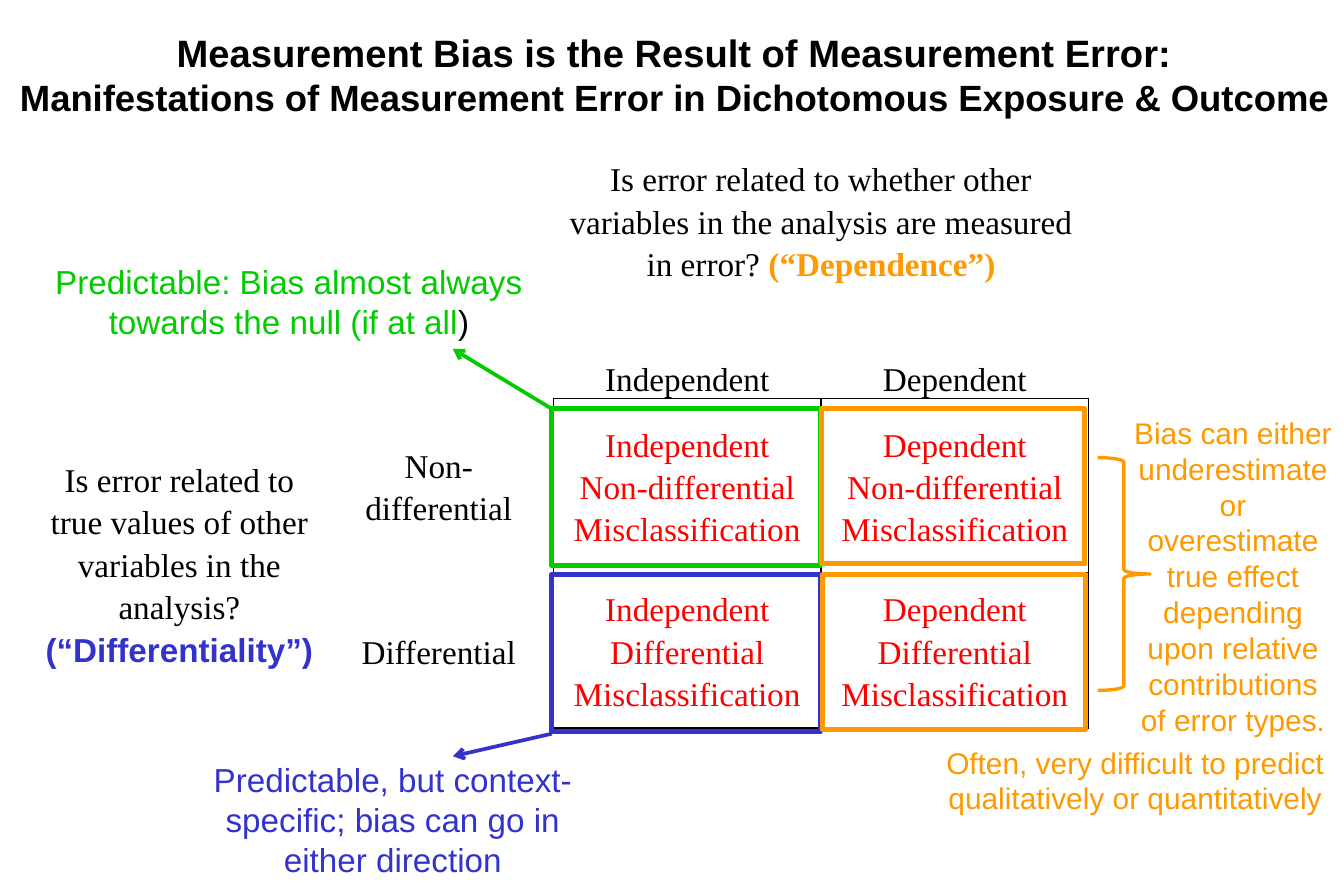
from lxml import etree
from pptx import Presentation
from pptx.dml.color import RGBColor
from pptx.enum.shapes import MSO_CONNECTOR, MSO_SHAPE
from pptx.enum.text import MSO_ANCHOR, PP_ALIGN
from pptx.oxml.ns import qn
from pptx.util import Cm, Pt

CENTER = PP_ALIGN.CENTER
TOP, MIDDLE = MSO_ANCHOR.TOP, MSO_ANCHOR.MIDDLE
STRAIGHT = MSO_CONNECTOR.STRAIGHT
RECTANGLE, RIGHT_BRACE = MSO_SHAPE.RECTANGLE, MSO_SHAPE.RIGHT_BRACE

BLACK = RGBColor(0x00, 0x00, 0x00)
RED = RGBColor(0xFF, 0x00, 0x00)
GREEN = RGBColor(0x00, 0xCC, 0x00)
BLUE = RGBColor(0x33, 0x33, 0xCC)
ORANGE = RGBColor(0xFF, 0x99, 0x00)
SANS, SERIF = "Arial", "Times New Roman"

# Content: a run is (text, font, size, colour, bold)
TITLE_RUNS = [
    ("Measurement Bias is the Result of Measurement Error:", SANS, 23, BLACK, True),
    ("Manifestations of Measurement Error in Dichotomous Exposure & Outcome",
     SANS, 22, BLACK, True),
]


def serif(text, color=BLACK):
    return [(text, SERIF, 20, color, False)]


DEPENDENCE_QUESTION = [
    serif("Is error related to whether other variables in the analysis "
          "are measured in error? ")
    + [("(“Dependence”)", SERIF, 20, ORANGE, True)]
]
DIFFERENTIALITY_QUESTION = [
    serif("Is error related to true values of other variables in the analysis?"),
    [("(“Differentiality”)", SANS, 20, BLUE, True)],
]
DEPENDENCE = ["Independent", "Dependent"]
DIFFERENTIALITY = ["Non-differential", "Differential"]

# Notes: left, top, width, height in cm, then runs
NOTES = [
    (0.53, 5.44, 11.23, 1.96, [
        ("Predictable: Bias almost always towards the null (if at all",
         SANS, 20, GREEN, False),
        (")", SANS, 20, BLACK, False)]),
    (3.91, 16.03, 8.89, 2.82, [
        ("Predictable, but context-specific; bias can go in either direction",
         SANS, 20, BLUE, False)]),
    (23.83, 8.69, 4.78, 7.19, [
        ("Bias can either underestimate or overestimate true effect depending "
         "upon relative contributions of error types.", SANS, 18, ORANGE, False)]),
    (19.53, 15.7, 9.22, 1.8, [
        ("Often, very difficult to predict qualitatively or quantitatively",
         SANS, 18, ORANGE, False)]),
]

# Outlines: preset, left, top, width, height in cm, colour, line width
OUTLINES = [
    (RECTANGLE, 11.73, 8.69, 5.72, 3.33, GREEN, 3),
    (RECTANGLE, 11.73, 12.22, 5.72, 3.33, BLUE, 3),
    (RECTANGLE, 17.48, 8.69, 5.59, 3.3, ORANGE, 3),
    (RECTANGLE, 17.5, 12.22, 5.59, 3.3, ORANGE, 3),
    (RIGHT_BRACE, 23.34, 9.73, 1.12, 4.95, ORANGE, 2),
]

# Arrows: start and end in cm, colour
ARROWS = [
    (11.73, 8.69, 9.63, 7.42, GREEN),
    (11.73, 15.6, 9.63, 16.08, BLUE),
]

COLUMN_WIDTHS = [6.15, 4.88, 5.69, 5.69, 1.73]
ROW_HEIGHTS = [4.24, 0.84, 3.7, 3.31, 0.84]
FIRST_ROW, FIRST_COL = 2, 2  # where the two-by-two matrix starts
MATRIX = {(FIRST_ROW + r, FIRST_COL + c) for r in range(2) for c in range(2)}
SIDES = {"L": (0, -1), "R": (0, 1), "T": (-1, 0), "B": (1, 0)}


def add_run(paragraph, text, font, size, color, bold):
    run = paragraph.add_run()
    run.text = text
    run.font.name = font
    run.font.size = Pt(size)
    run.font.bold = bold
    run.font.color.rgb = color


def fill_cell(cell, paragraphs, anchor=MIDDLE):
    cell.vertical_anchor = anchor
    frame = cell.text_frame
    for i, runs in enumerate(paragraphs):
        paragraph = frame.add_paragraph() if i else frame.paragraphs[0]
        paragraph.alignment = CENTER
        paragraph.line_spacing = 1.15
        for run in runs:
            add_run(paragraph, *run)


def draw_borders(cell, row, col):
    """A side is black where it touches a matrix cell, otherwise empty."""
    properties = cell._tc.get_or_add_tcPr()
    for side, (down, across) in SIDES.items():
        line = etree.SubElement(properties, qn("a:ln" + side), w=str(Pt(1)))
        if (row, col) in MATRIX or (row + down, col + across) in MATRIX:
            fill = etree.SubElement(line, qn("a:solidFill"))
            etree.SubElement(fill, qn("a:srgbClr"), val=str(BLACK))
        else:
            etree.SubElement(line, qn("a:noFill"))


prs = Presentation()
prs.slide_width, prs.slide_height = Cm(28.58), Cm(19.05)
slide = prs.slides.add_slide(prs.slide_layouts[5])
shapes = slide.shapes

# Title
title = shapes.title
title.left, title.top, title.width, title.height = map(Cm, (-0.1, 0.84, 28.9, 1.47))
title.text_frame.word_wrap = True
title.text_frame.vertical_anchor = MIDDLE
heading = title.text_frame.paragraphs[0]
heading.alignment = CENTER
add_run(heading, *TITLE_RUNS[0])
heading.add_line_break()
add_run(heading, *TITLE_RUNS[1])

# Table grid
table = shapes.add_table(
    len(ROW_HEIGHTS), len(COLUMN_WIDTHS), Cm(0.74), Cm(3.33),
    Cm(sum(COLUMN_WIDTHS)), Cm(sum(ROW_HEIGHTS))).table
table.first_row = table.horz_banding = False
for column, width in zip(table.columns, COLUMN_WIDTHS):
    column.width = Cm(width)
for r, height in enumerate(ROW_HEIGHTS):
    table.rows[r].height = Cm(height)
    for c in range(len(COLUMN_WIDTHS)):
        cell = table.cell(r, c)
        cell.margin_left = cell.margin_right = Cm(0.18)
        cell.margin_top = cell.margin_bottom = 0
        draw_borders(cell, r, c)
        cell.fill.background()

# Table text
table.cell(0, 2).merge(table.cell(0, 3))
table.cell(2, 0).merge(table.cell(3, 0))
fill_cell(table.cell(0, 2), DEPENDENCE_QUESTION, TOP)
fill_cell(table.cell(2, 0), DIFFERENTIALITY_QUESTION)
for c, dependence in enumerate(DEPENDENCE, FIRST_COL):
    fill_cell(table.cell(FIRST_ROW - 1, c), [serif(dependence)])
for r, differentiality in enumerate(DIFFERENTIALITY, FIRST_ROW):
    fill_cell(table.cell(r, FIRST_COL - 1), [serif(differentiality)])
    for c, dependence in enumerate(DEPENDENCE, FIRST_COL):
        error_type = (dependence, differentiality, "Misclassification")
        fill_cell(table.cell(r, c), [serif(word, RED) for word in error_type])

# Frames and brace
for preset, *box, color, weight in OUTLINES:
    outline = shapes.add_shape(preset, *map(Cm, box))
    outline.shadow.inherit = False
    outline.fill.background()
    outline.line.color.rgb = color
    outline.line.width = Pt(weight)

# Arrows from the frames to their notes
for *ends, color in ARROWS:
    arrow = shapes.add_connector(STRAIGHT, *map(Cm, ends))
    arrow.line.color.rgb = color
    arrow.line.width = Pt(2.25)
    etree.SubElement(arrow.line._get_or_add_ln(), qn("a:tailEnd"), type="arrow")
    etree.SubElement(arrow._element.spPr, qn("a:effectLst"))

# Notes
for *box, runs in NOTES:
    note = shapes.add_textbox(*map(Cm, box)).text_frame
    note.word_wrap = True
    note.paragraphs[0].alignment = CENTER
    for run in runs:
        add_run(note.paragraphs[0], *run)

prs.save("out.pptx")
